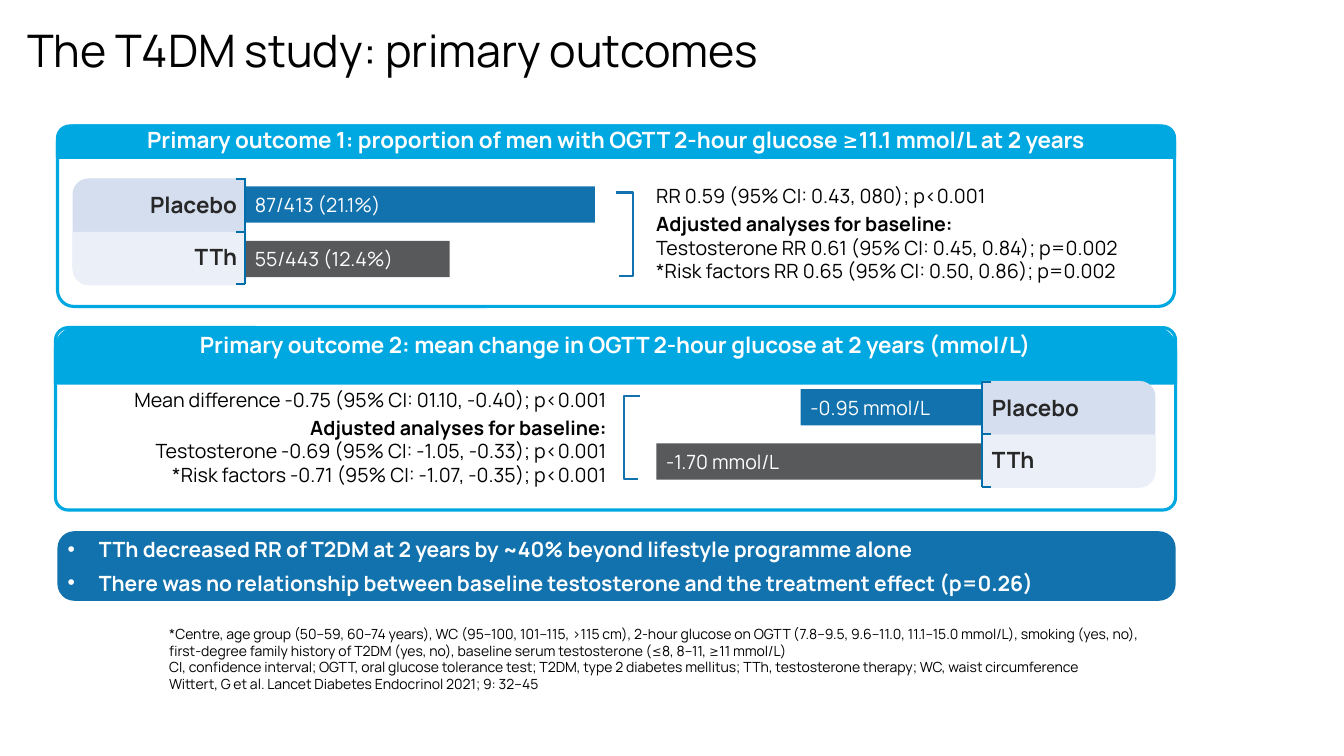
from dataclasses import dataclass

from lxml.etree import SubElement
from pptx import Presentation
from pptx.dml.color import RGBColor
from pptx.enum.shapes import MSO_CONNECTOR as Connector, MSO_SHAPE as Shape
from pptx.enum.text import MSO_ANCHOR as Anchor, MSO_AUTO_SIZE as AutoSize, PP_ALIGN as Align
from pptx.oxml.ns import qn
from pptx.util import Inches, Pt


@dataclass(frozen=True)
class Theme:
    font: str = "Manrope"
    black: str = "000000"
    white: str = "FFFFFF"
    label: str = "272727"
    cyan: str = "00A8E1"
    blue: str = "1272AE"
    grey: str = "58595B"
    axis: str = "006EAB"
    placebo_cell: str = "D5DEEF"
    therapy_cell: str = "EBEFF7"
    title_size: int = 32
    heading_size: int = 16
    list_size: int = 15
    text_size: int = 14
    note_size: int = 10
    frame_width: float = 2.25
    rule_width: float = 1.5


class OutcomeSlide:
    def __init__(self, slide, theme):
        self.slide, self.theme = slide, theme
        self.shapes = slide.shapes

    def set_text(self, frame, texts, size, color, bold=False, align=Align.LEFT,
                 bold_at=None, **spacing):
        """Fill a text frame; bold_at marks one emphasised paragraph."""
        for i, text in enumerate(texts):
            par = frame.paragraphs[0] if i == 0 else frame.add_paragraph()
            par.text = text
            par.alignment = align
            par.line_spacing = spacing.get("line_spacing")
            par.space_after = spacing.get("space_after")
            font = par.font
            font.name, font.size = self.theme.font, Pt(size)
            font.bold = bold or i == bold_at
            font.color.rgb = RGBColor.from_string(color)
            if i == bold_at:
                par.space_before = Pt(3)

    def stroke(self, line, color, width):
        line.color.rgb = RGBColor.from_string(color)
        line.width = Pt(width)

    def block(self, kind, left, top, width, height, fill=None, frame=None,
              adjust=None, turn=0):
        """Preset shape given by its visible box, also when turned."""
        if turn % 180:
            left, top = left + (width - height) / 2, top + (height - width) / 2
            width, height = height, width
        shape = self.shapes.add_shape(kind, *map(Inches, (left, top, width, height)))
        shape.shadow.inherit = False
        shape.rotation = turn
        if adjust is not None:
            shape.adjustments[0] = adjust
        if fill:
            shape.fill.solid()
            shape.fill.fore_color.rgb = RGBColor.from_string(fill)
        else:
            shape.fill.background()
        if frame:
            self.stroke(shape.line, frame, self.theme.frame_width)
        else:
            shape.line.fill.background()
        return shape

    def text(self, left, top, width, height, texts, size, color, wrap=False,
             anchor=Anchor.TOP, **style):
        box = self.shapes.add_textbox(*map(Inches, (left, top, width, height)))
        frame = box.text_frame
        frame.word_wrap, frame.vertical_anchor = wrap, anchor
        frame.auto_size = AutoSize.SHAPE_TO_FIT_TEXT
        self.set_text(frame, texts, size, color, **style)

    def rule(self, x1, y1, x2, y2):
        line = self.shapes.add_connector(Connector.STRAIGHT, *map(Inches, (x1, y1, x2, y2)))
        self.stroke(line.line, self.theme.axis, self.theme.rule_width)
        SubElement(line.element.spPr, qn("a:effectLst"))

    def bracket(self, tip, spine, end, top, bottom):
        outline = self.shapes.build_freeform(Inches(tip), Inches(top))
        outline.add_line_segments(
            [(Inches(x), Inches(y)) for x, y in ((spine, top), (spine, bottom), (end, bottom))],
            close=False)
        shape = outline.convert_to_shape()
        shape.shadow.inherit = False
        shape.fill.background()
        self.stroke(shape.line, self.theme.blue, self.theme.rule_width)

    def bar(self, left, top, length, color, value):
        bar = self.block(Shape.RECTANGLE, left, top, length, 0.36, fill=color)
        bar.text_frame.vertical_anchor = Anchor.MIDDLE
        self.set_text(bar.text_frame, [value], self.theme.text_size, self.theme.white)

    def title(self, text):
        title = self.shapes.title
        title.left, title.top, title.width, title.height = map(Inches, (0.17, -0.01, 12.53, 1.08))
        title.text_frame.vertical_anchor = Anchor.MIDDLE
        title.text_frame.auto_size = AutoSize.NONE
        self.set_text(title.text_frame, [text], self.theme.title_size, self.theme.black,
                      line_spacing=0.9)

    def panel(self, left, top, width, height, corner, header_height, header_corner, heading):
        theme = self.theme
        self.block(Shape.ROUNDED_RECTANGLE, left, top, width, height,
                   frame=theme.cyan, adjust=corner)
        header = self.block(Shape.ROUND_2_SAME_RECTANGLE, left, top, width, header_height,
                            fill=theme.cyan, frame=theme.cyan, adjust=header_corner)
        frame = header.text_frame
        frame.margin_top = frame.margin_bottom = 0
        frame.vertical_anchor = Anchor.TOP
        self.set_text(frame, [heading], theme.heading_size, theme.white, bold=True,
                      align=Align.CENTER, line_spacing=0.9)

    def comparison(self, axis, top, labels_left, bars):
        """Group labels, value bars and the axis between them."""
        theme = self.theme
        cell_left = axis - 1.71 if labels_left else axis
        self.block(Shape.ROUND_2_SAME_RECTANGLE, cell_left, top, 1.72, 1.04,
                   fill=theme.placebo_cell, adjust=0.15, turn=270 if labels_left else 90)
        self.block(Shape.ROUND_1_RECTANGLE, cell_left, top + 0.53, 1.72, 0.53,
                   fill=theme.therapy_cell, adjust=0.3, turn=180 if labels_left else 90)
        for row, (length, color, value) in enumerate(bars):
            self.bar(axis if labels_left else axis - length, top + 0.08 + 0.54 * row,
                     length, color, value)
        self.text(axis - 1.36 if labels_left else axis, top + 0.08, 1.38, 0.89,
                  ["Placebo", "TTh"], theme.heading_size, theme.label, bold=True,
                  align=Align.RIGHT if labels_left else Align.LEFT, space_after=Pt(18))
        tick = -0.09 if labels_left else 0.09
        for row in range(3):
            y = top + 0.01 + 0.52 * row
            self.rule(axis + tick, y, axis, y)
        self.rule(axis, top, axis, top + 1.05)

    def statistics(self, left, top, width, texts, align):
        self.text(left, top, width, 1.09, texts, self.theme.text_size, self.theme.black,
                  align=align, bold_at=1)

    def conclusions(self, texts):
        theme = self.theme
        area = (0.57, 5.27, 11.09, 0.69)
        self.block(Shape.ROUNDED_RECTANGLE, *area, fill=theme.blue, adjust=0.24)
        body = self.slide.placeholders[1]
        body.left, body.top, body.width, body.height = map(Inches, area)
        self.shapes.element.append(body.element)  # bring the list in front of its panel
        frame = body.text_frame
        frame.margin_top = frame.margin_bottom = 0
        frame.vertical_anchor, frame.auto_size = Anchor.MIDDLE, AutoSize.NONE
        frame.text = "\n".join(texts)
        for par in frame.paragraphs:
            props = par._p.get_or_add_pPr()
            props.set("marL", str(Inches(0.31)))
            props.set("indent", str(-Inches(0.31)))
            SubElement(props, qn("a:buFont")).set("typeface", "Arial")
            SubElement(props, qn("a:buChar")).set("char", "•")
            par.space_before, par.space_after = Pt(0), Pt(6)
            par.font.name, par.font.size = theme.font, Pt(theme.list_size)
            par.font.bold = True
            par.font.color.rgb = RGBColor.from_string(theme.white)


def main():
    prs = Presentation()
    prs.slide_width, prs.slide_height = Inches(13.33), Inches(7.5)
    theme = Theme()
    page = OutcomeSlide(prs.slides.add_slide(prs.slide_layouts[1]), theme)
    page.title("The T4DM study: primary outcomes")

    # Primary outcome 1
    page.panel(0.57, 1.25, 11.08, 1.79, 0.09, 0.31, 0.39,
               "Primary outcome 1: proportion of men with OGTT 2-hour glucose ≥11.1 mmol/L at 2 years")
    page.comparison(2.43, 1.77, True, [(3.47, theme.blue, "87/413 (21.1%)"),
                                       (2.03, theme.grey, "55/443 (12.4%)")])
    page.bracket(6.11, 6.28, 6.14, 1.91, 2.74)
    page.statistics(6.41, 1.78, 4.87, [
        "RR 0.59 (95% CI: 0.43, 080); p<0.001",
        "Adjusted analyses for baseline:",
        "Testosterone RR 0.61 (95% CI: 0.45, 0.84); p=0.002",
        "*Risk factors RR 0.65 (95% CI: 0.50, 0.86); p=0.002"], Align.LEFT)

    # Primary outcome 2
    page.panel(0.55, 3.25, 11.11, 1.81, 0.07, 0.55, 0.41,
               "Primary outcome 2: mean change in OGTT 2-hour glucose at 2 years (mmol/L)")
    page.comparison(9.74, 3.78, False, [(1.8, theme.blue, "-0.95 mmol/L"),
                                        (3.23, theme.grey, "-1.70 mmol/L")])
    page.bracket(6.35, 6.19, 6.33, 3.93, 4.75)
    page.statistics(1.06, 3.8, 5.06, [
        "Mean difference -0.75 (95% CI: 01.10, -0.40); p<0.001",
        "Adjusted analyses for baseline:",
        "Testosterone -0.69 (95% CI: -1.05, -0.33); p<0.001",
        "*Risk factors -0.71 (95% CI: -1.07, -0.35); p<0.001"], Align.RIGHT)

    # Conclusions and footnotes
    page.conclusions([
        "TTh decreased RR of T2DM at 2 years by ~40% beyond lifestyle programme alone",
        "There was no relationship between baseline testosterone and the treatment effect (p=0.26)"])
    page.text(1.58, 6.15, 11.11, 0.77, [
        "*Centre, age group (50–59, 60–74 years), WC (95–100, 101–115, >115 cm), 2-hour glucose on OGTT "
        "(7.8–9.5, 9.6–11.0, 11.1–15.0 mmol/L), smoking (yes, no),\v"
        "first-degree family history of T2DM (yes, no), baseline serum testosterone (≤8, 8–11, ≥11 mmol/L)",
        "CI, confidence interval; OGTT, oral glucose tolerance test; T2DM, type 2 diabetes mellitus; "
        "TTh, testosterone therapy; WC, waist circumference",
        "Wittert, G et al. Lancet Diabetes Endocrinol 2021; 9: 32–45"],
        theme.note_size, theme.black, wrap=True, anchor=Anchor.BOTTOM)

    prs.save("out.pptx")


if __name__ == "__main__":
    main()
